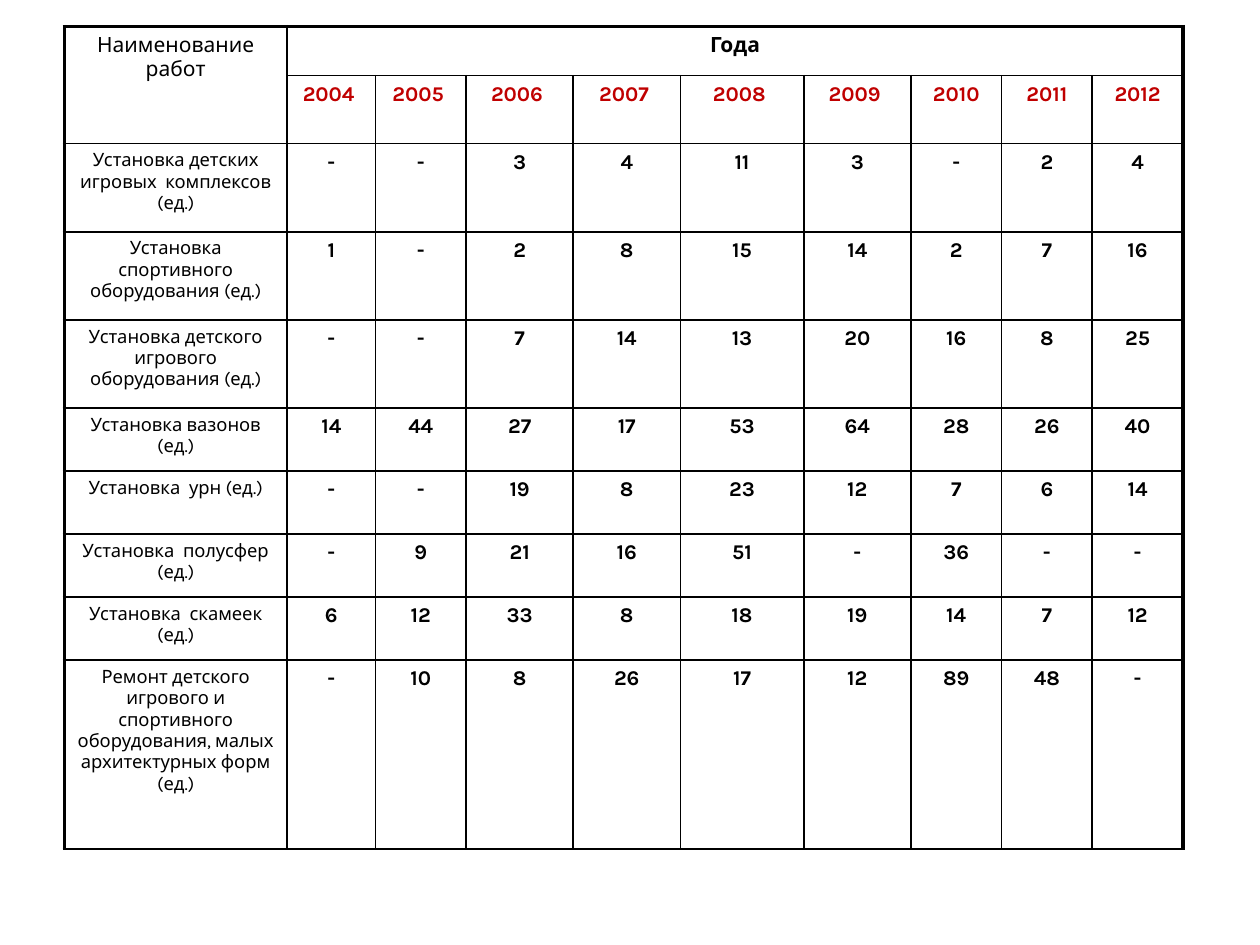
from lxml import etree
from pptx import Presentation
from pptx.dml.color import RGBColor
from pptx.enum.shapes import MSO_SHAPE
from pptx.enum.text import PP_ALIGN
from pptx.oxml.ns import qn
from pptx.util import Inches, Pt

ROUNDED = MSO_SHAPE.ROUNDED_RECTANGLE
CENTER = PP_ALIGN.CENTER

COLORS = {"text": "000000", "year": "C00000", "panel": "FFFFFF", "border": "000000"}
FONT = "Karla"
THIN, THICK = 1, 2.25

WORKS_HEADING = "Наименование работ"
YEARS_HEADING = "Года"
YEARS = ["2004 ", "2005 ", "2006 ", "2007 ", "2008 ", "2009 ", "2010", "2011", "2012"]
WORKS = [
    ("Установка детских игровых  комплексов (ед.)", ["-", "-", "3", "4", "11", "3", "-", "2", "4"]),
    ("Установка спортивного оборудования (ед.)", ["1", "-", "2", "8", "15", "14", "2", "7", "16"]),
    ("Установка детского игрового оборудования (ед.)", ["-", "-", "7", "14", "13", "20", "16", "8", "25"]),
    ("Установка вазонов (ед.)", ["14", "44", "27", "17", "53", "64", "28", "26", "40"]),
    ("Установка  урн (ед.)", ["-", "-", "19", "8", "23", "12", "7", "6", "14"]),
    ("Установка  полусфер (ед.)", ["-", "9", "21", "16", "51", "-", "36", "-", "-"]),
    ("Установка  скамеек (ед.)", ["6", "12", "33", "8", "18", "19", "14", "7", "12"]),
    ("Ремонт детского игрового и спортивного оборудования, малых архитектурных форм (ед.)",
     ["-", "10", "8", "26", "17", "12", "89", "48", "-"]),
]
COLUMN_WIDTHS = [1.77, 0.7, 0.72, 0.85, 0.85, 0.98, 0.85, 0.72, 0.72, 0.72]
ROW_HEIGHTS = [0.39, 0.54] + [0.7] * 3 + [0.5] * 4 + [1.5]


def write_cell(cell, text, size=12, bold=True, color="text"):
    paragraph = cell.text_frame.paragraphs[0]
    paragraph.alignment = CENTER
    run = paragraph.add_run()
    run.text = text
    run.font.name = FONT
    run.font.size = Pt(size)
    run.font.bold = bold
    run.font.color.rgb = RGBColor.from_string(COLORS[color])


def set_borders(cell, widths):
    properties = cell._tc.get_or_add_tcPr()
    for position, (side, width) in enumerate(widths.items()):
        line = etree.Element(qn(f"a:ln{side}"), w=str(Pt(width)))
        fill = etree.SubElement(line, qn("a:solidFill"))
        etree.SubElement(fill, qn("a:srgbClr"), val=COLORS["border"])
        properties.insert(position, line)


def add_panel(slide):
    panel = slide.shapes.add_shape(ROUNDED, Inches(0.1), Inches(0.11), Inches(9.8), Inches(7.29))
    panel.adjustments[0] = 0.017
    panel.shadow.inherit = False
    panel.fill.solid()
    panel.fill.fore_color.rgb = RGBColor.from_string(COLORS["panel"])
    panel.line.fill.background()


def add_works_table(slide):
    row_count, column_count = len(ROW_HEIGHTS), len(COLUMN_WIDTHS)
    frame = slide.shapes.add_table(row_count, column_count, Inches(0.51), Inches(0.21),
                                   Inches(sum(COLUMN_WIDTHS)), Inches(sum(ROW_HEIGHTS)))
    table = frame.table
    table.first_row = table.horz_banding = False
    for column, width in zip(table.columns, COLUMN_WIDTHS):
        column.width = Inches(width)
    for row, height in zip(table.rows, ROW_HEIGHTS):
        row.height = Inches(height)

    table.cell(0, 0).merge(table.cell(1, 0))
    table.cell(0, 1).merge(table.cell(0, column_count - 1))
    for row in range(row_count):
        for column in range(column_count):
            cell = table.cell(row, column)
            cell.fill.background()
            if cell.is_spanned:
                continue
            span = cell.span_width if cell.is_merge_origin else 1
            set_borders(cell, {
                "L": THICK if column == 0 else THIN,
                "R": THICK if column + span == column_count else THIN,
                "T": THICK if row == 0 else THIN,
                "B": THIN,
            })

    write_cell(table.cell(0, 0), WORKS_HEADING, bold=False)
    write_cell(table.cell(0, 1), YEARS_HEADING)
    for column, year in enumerate(YEARS, start=1):
        write_cell(table.cell(1, column), year, color="year")
    for row, (work, amounts) in enumerate(WORKS, start=2):
        write_cell(table.cell(row, 0), work, size=10.5, bold=False)
        for column, amount in enumerate(amounts, start=1):
            write_cell(table.cell(row, column), amount)


def main():
    presentation = Presentation()
    presentation.slide_width = Inches(10)
    presentation.slide_height = Inches(7.5)
    slide = presentation.slides.add_slide(presentation.slide_layouts[6])
    add_panel(slide)
    add_works_table(slide)
    presentation.save("out.pptx")


if __name__ == "__main__":
    main()
